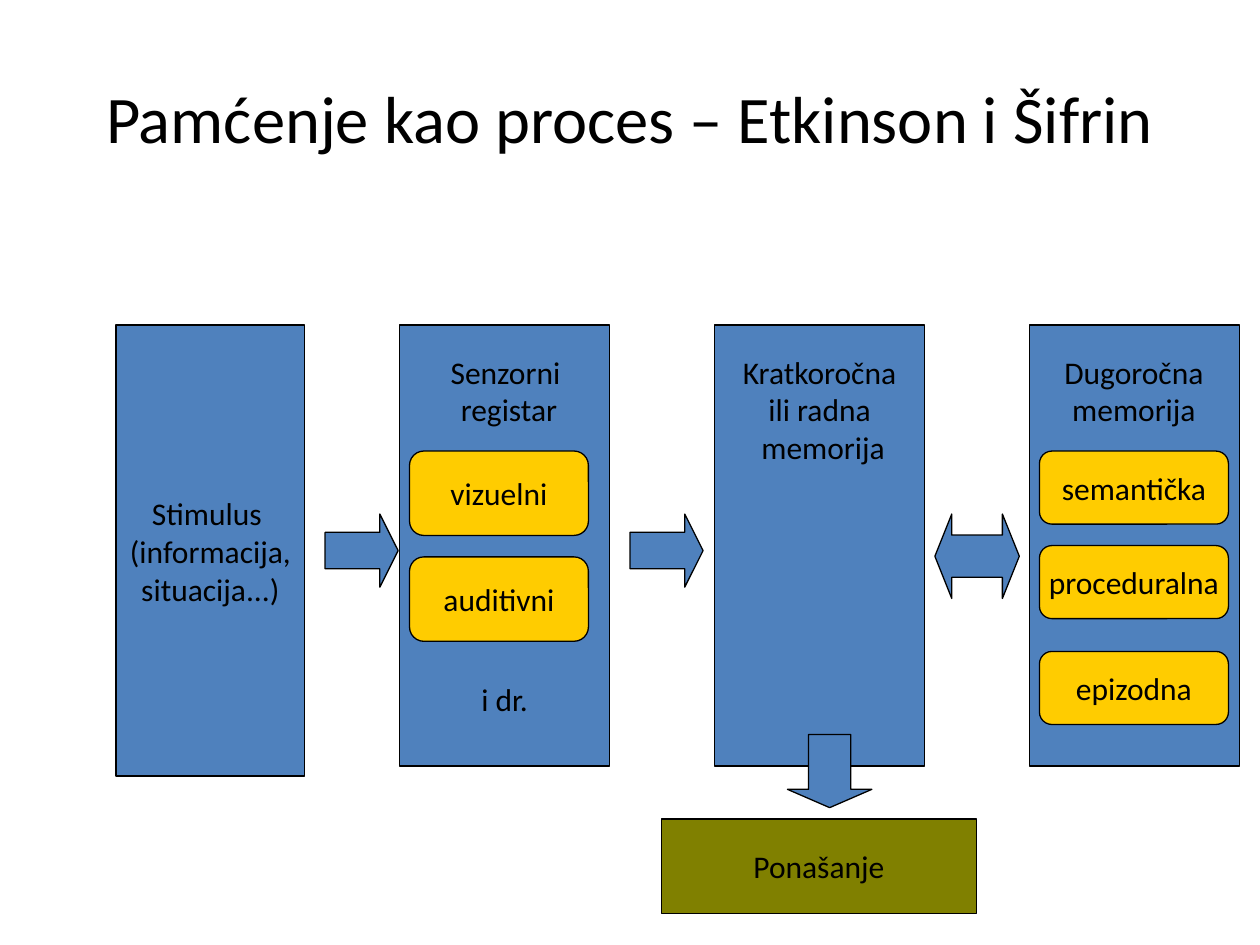
"""Builds the memory process slide: stimulus, sensory register, short-term and long-term memory."""
from dataclasses import dataclass

from pptx import Presentation
from pptx.dml.color import RGBColor
from pptx.enum.shapes import MSO_SHAPE as SHAPE
from pptx.enum.text import MSO_ANCHOR as ANCHOR, MSO_AUTO_SIZE as AUTO, PP_ALIGN as ALIGN
from pptx.util import Inches, Pt


@dataclass(frozen=True)
class Theme:
    font: str = "Calibri"
    title: Pt = Pt(38)
    body: Pt = Pt(18)
    outline: Pt = Pt(0.75)
    ink: RGBColor = RGBColor(0x00, 0x00, 0x00)
    stage: RGBColor = RGBColor(0x4F, 0x81, 0xBD)
    store: RGBColor = RGBColor(0xFF, 0xCC, 0x00)
    behaviour: RGBColor = RGBColor(0x80, 0x80, 0x00)


T = Theme()


def write(tf, text, size=T.body):
    tf.text = text
    for p in tf.paragraphs:
        p.alignment = ALIGN.CENTER
        p.font.name, p.font.size = T.font, size
        p.font.color.rgb = T.ink


def add_block(kind, box, fill, text="", adjustments=()):
    sp = s.shapes.add_shape(kind, *map(Inches, box))
    sp.shadow.inherit = False
    sp.fill.solid()
    sp.fill.fore_color.rgb = fill
    sp.line.color.rgb, sp.line.width = T.ink, T.outline
    for i, value in enumerate(adjustments):
        sp.adjustments[i] = value
    if text:
        tf = sp.text_frame
        tf.word_wrap = False
        tf.vertical_anchor = ANCHOR.MIDDLE
        write(tf, text)
    return sp


prs = Presentation()
prs.slide_width, prs.slide_height = Inches(10), Inches(7.5)
s = prs.slides.add_slide(prs.slide_layouts[5])

title = s.shapes.title
title.left, title.top, title.width, title.height = map(Inches, (0.5, 0.3, 9, 1.25))
title.text_frame.auto_size = AUTO.NONE
title.text_frame.vertical_anchor = ANCHOR.MIDDLE
write(title.text_frame, "Pamćenje kao proces – Etkinson i Šifrin", T.title)

add_block(SHAPE.RECTANGLE, (0.92, 2.58, 1.5, 3.58), T.stage,
          "Stimulus \n(informacija,\nsituacija...)")
sensory, short_term, long_term = [
    add_block(SHAPE.RECTANGLE, (3.17 + 2.5 * i, 2.58, 1.67, 3.5), T.stage, text)
    for i, text in enumerate(("i dr.", "", ""))
]
sensory.text_frame.vertical_anchor = ANCHOR.BOTTOM
sensory.text_frame.margin_bottom = Inches(0.38)

add_block(SHAPE.RECTANGLE, (5.25, 6.5, 2.5, 0.75), T.behaviour, "Ponašanje")

for kind, box, head in (
    (SHAPE.RIGHT_ARROW, (2.58, 4.08, 0.58, 0.58), 0.25),
    (SHAPE.RIGHT_ARROW, (5, 4.08, 0.58, 0.58), 0.25),
    (SHAPE.LEFT_RIGHT_ARROW, (7.42, 4.08, 0.67, 0.67), 0.2),
    (SHAPE.DOWN_ARROW, (6.25, 5.83, 0.67, 0.58), 0.25),
):
    add_block(kind, box, T.stage, adjustments=(0.5, head))

for left, width, height, stores in (
    (3.25, 1.42, 0.67, (("vizuelni", 3.58), ("auditivni", 4.42))),
    (8.25, 1.5, 0.58, (("semantička", 3.58), ("proceduralna", 4.33), ("epizodna", 5.17))),
):
    for name, top in stores:
        add_block(SHAPE.ROUNDED_RECTANGLE, (left, top, width, height), T.store, name, (0.17,))

for left, width, height, heading in (
    (3.33, 1.42, 0.7, "Senzorni \nregistar"),
    (5.67, 1.67, 1, "Kratkoročna\nili radna\n memorija"),
    (8.25, 1.5, 0.7, "Dugoročna\nmemorija"),
):
    tb = s.shapes.add_textbox(*map(Inches, (left, 2.75, width, height)))
    tb.text_frame.word_wrap = True
    tb.text_frame.auto_size = AUTO.SHAPE_TO_FIT_TEXT
    write(tb.text_frame, heading)

prs.save("out.pptx")
